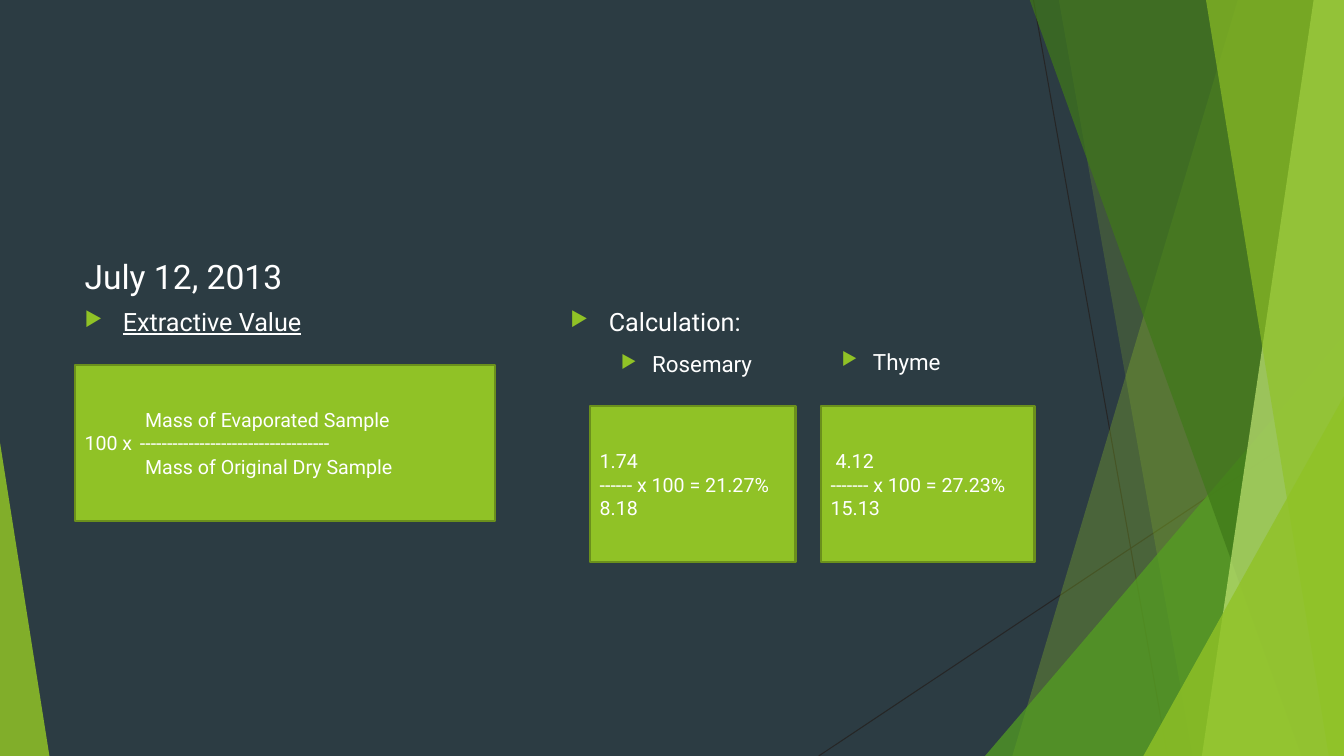
from pptx import Presentation
from pptx.dml.color import RGBColor
from pptx.enum.shapes import MSO_CONNECTOR as Link, MSO_SHAPE as Shape
from pptx.enum.text import MSO_ANCHOR as Anchor, PP_ALIGN as Align
from pptx.oxml.ns import qn
from pptx.util import Inches, Pt
from lxml.etree import SubElement as Sub

SLATE = RGBColor(0x2C, 0x3C, 0x43)
INK = RGBColor(0x26, 0x26, 0x26)
WHITE = RGBColor(0xFF, 0xFF, 0xFF)
LIME = RGBColor(0x90, 0xC2, 0x26)
PALE = RGBColor(0xC0, 0xE4, 0x74)
GREEN = RGBColor(0x54, 0xA0, 0x21)
FOREST = RGBColor(0x3F, 0x78, 0x19)
OLIVE = RGBColor(0x6B, 0x90, 0x1C)
WIDE, HIGH, TOP = 13.33, 7.5, -0.01


class Deck:
    font = "Roboto"

    def __init__(self):
        self.show = Presentation()
        self.show.slide_width = Inches(WIDE)
        self.show.slide_height = Inches(HIGH)
        self.slide = self.show.slides.add_slide(self.show.slide_layouts[6])
        back = self.slide.background.fill
        back.solid()
        back.fore_color.rgb = SLATE
        self.shapes = self.slide.shapes

    def line(self, x1, y1, x2, y2):
        line = self.shapes.add_connector(
            Link.STRAIGHT, Inches(x1), Inches(y1), Inches(x2), Inches(y2))
        line.line.color.rgb = INK
        line.line.width = Pt(0.75)
        Sub(line._element.spPr, qn("a:effectLst"))

    def tint(self, shape, color, alpha):
        """Fill without outline, alpha in percent."""
        shape.shadow.inherit = False
        shape.line.fill.background()
        shape.fill.solid()
        shape.fill.fore_color.rgb = color
        tone = shape._element.spPr.find(qn("a:solidFill"))[0]
        Sub(tone, qn("a:alpha"), val=str(alpha * 1000))

    def band(self, left, right, foot, color, alpha):
        """Slanted band: two top corners, a foot on the left, the slide's edge."""
        pen = self.shapes.build_freeform(Inches(left), Inches(TOP), 1)
        pen.add_line_segments([(Inches(x), Inches(y)) for x, y in (
            (right, TOP), (right, HIGH), (foot, HIGH))])
        self.tint(pen.convert_to_shape(), color, alpha)

    def wedge(self, x, y, wide, peak, color, alpha):
        """Triangle that stands on the slide's foot."""
        shape = self.shapes.add_shape(
            Shape.ISOSCELES_TRIANGLE, Inches(x), Inches(y),
            Inches(wide), Inches(HIGH - y))
        shape.adjustments[0] = peak
        self.tint(shape, color, alpha)

    def style(self, par, size):
        par.alignment = Align.LEFT
        for run in par.runs:
            run.font.name = self.font
            run.font.size = Pt(size)
            run.font.color.rgb = WHITE

    def bullet(self, par, left, hang):
        props = par._p.get_or_add_pPr()
        props.set("marL", str(Inches(left)))
        props.set("indent", str(-Inches(hang)))
        Sub(Sub(props, qn("a:buClr")), qn("a:srgbClr"), val=str(LIME))
        Sub(props, qn("a:buSzPct"), val="80000")
        Sub(props, qn("a:buChar"), char="▶")

    def text(self, x, y, wide, high, rows, anchor=Anchor.TOP):
        """Rows are (text, size, bullet level or None)."""
        box = self.shapes.add_textbox(
            Inches(x), Inches(y), Inches(wide), Inches(high))
        frame = box.text_frame
        frame.word_wrap = True
        frame.vertical_anchor = anchor
        frame.text = "\n".join(row[0] for row in rows)
        for par, (_, size, level) in zip(frame.paragraphs, rows):
            self.style(par, size)
            par.space_before = Pt(10)
            if level is not None:
                par.level = level
                self.bullet(par, *((0.38, 0.38), (0.81, 0.31))[level])
        return frame

    def card(self, x, y, wide, rows):
        box = self.shapes.add_shape(
            Shape.RECTANGLE, Inches(x), Inches(y), Inches(wide), Inches(1.55))
        box.shadow.inherit = False
        box.fill.solid()
        box.fill.fore_color.rgb = LIME
        box.line.color.rgb = OLIVE
        box.line.width = Pt(1.5)
        frame = box.text_frame
        frame.word_wrap = True
        frame.vertical_anchor = Anchor.MIDDLE
        frame.text = "\n".join(rows)
        for par in frame.paragraphs:
            self.style(par, 14)
        return frame.paragraphs

    def tab(self, par, stop):
        tabs = Sub(par._p.get_or_add_pPr(), qn("a:tabLst"))
        Sub(tabs, qn("a:tab"), pos=str(Inches(stop)), algn="l")


def main():
    deck = Deck()

    deck.line(10.25, 0, 11.58, HIGH)
    deck.line(WIDE, 4.03, 8.12, HIGH)
    deck.band(12.28, WIDE, 10.04, LIME, 30)
    deck.band(10.5, WIDE, 11.83, LIME, 20)
    deck.wedge(9.77, 3.33, 3.56, 1, GREEN, 72)
    deck.band(10.21, WIDE, 12.91, FOREST, 70)
    deck.band(13.03, WIDE, 11.92, PALE, 70)
    deck.band(11.96, WIDE, 13.18, LIME, 65)
    deck.wedge(11.34, 3.93, 1.99, 1, LIME, 80)
    deck.wedge(0, 4.39, 0.49, 0, LIME, 85)

    deck.text(0.74, 2.36, 4.58, 0.63, [("July 12, 2013", 24, None)],
              Anchor.BOTTOM)
    value = deck.text(0.74, 2.99, 4.58, 3.61, [("Extractive Value", 18, 0)])
    value.paragraphs[0].runs[0].font.underline = True
    ratio = deck.card(0.74, 3.62, 4.17, [
        "\tMass of Evaporated Sample",
        "100 x\t" + "-" * 35,
        "\tMass of Original Dry Sample"])
    for par, stop in zip(ratio, (0.6, 0.55, 0.6)):
        deck.tab(par, stop)

    deck.text(5.56, 2.99, 4.58, 3.61,
              [("Calculation:", 18, 0), ("Rosemary", 16, 1)])
    deck.text(7.75, 3.4, 2.39, 0.4, [("Thyme", 16, 1)])
    deck.card(5.85, 4.03, 2.04, ["1.74", "------ x 100 = 21.27%", "8.18"])
    deck.card(8.14, 4.03, 2.12, [" 4.12", "------- x 100 = 27.23%", "15.13"])

    deck.show.save("out.pptx")


if __name__ == "__main__":
    main()
